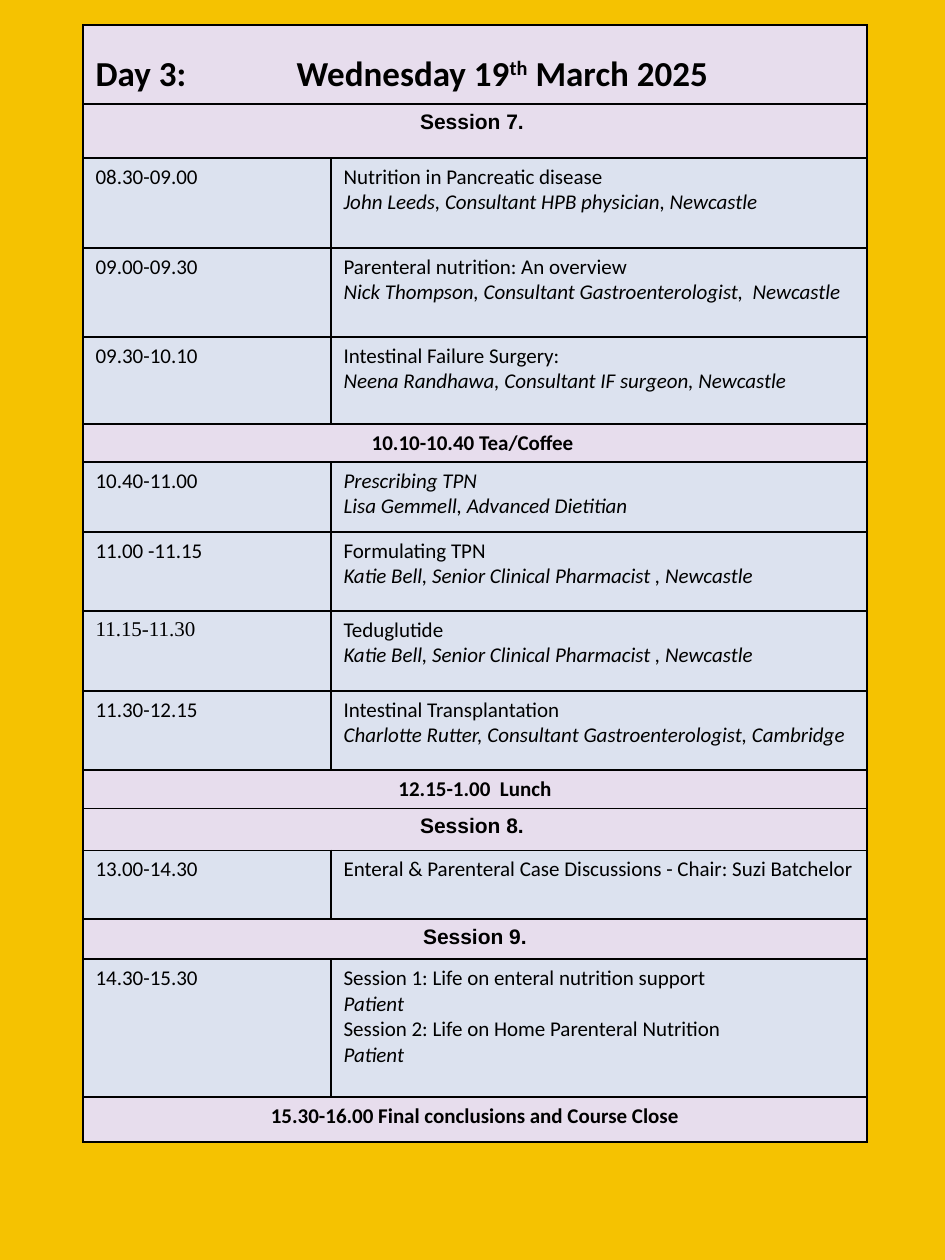
from pptx import Presentation
from pptx.dml.color import RGBColor
from pptx.enum.text import PP_ALIGN
from pptx.oxml.ns import qn
from pptx.util import Emu, Pt
from lxml.etree import SubElement

PX_PER_INCH = 126
GOLD, LILAC, BLUE, BLACK = "F5C201", "E7DDED", "DCE2EF", "000000"
LEFT, TOP = 83, 25
COLUMNS = (248, 536)
TITLE_HEIGHT = 79

# Banner rows: height, text, font
# Talk rows: height, time, time font, lines as (text, italic)
ROWS = [
    (54, "Session 7. ", "Arial"),
    (90, "08.30-09.00", "Calibri", [
        ("Nutrition in Pancreatic disease", False),
        ("John Leeds, Consultant HPB physician, Newcastle", True)]),
    (89, "09.00-09.30", "Calibri", [
        ("Parenteral nutrition: An overview", False),
        ("Nick Thompson, Consultant Gastroenterologist,  Newcastle", True)]),
    (87, "09.30-10.10", "Calibri", [
        ("Intestinal Failure Surgery:", False),
        ("Neena Randhawa, Consultant IF surgeon, Newcastle", True)]),
    (38, "10.10-10.40 Tea/Coffee ", "Calibri"),
    (70, "10.40-11.00", "Calibri", [
        ("Prescribing TPN", True),
        ("Lisa Gemmell, Advanced Dietitian", True)]),
    (79, "11.00 -11.15", "Calibri", [
        ("Formulating TPN", False),
        ("Katie Bell, Senior Clinical Pharmacist , Newcastle", True)]),
    (80, "11.15-11.30", "Times New Roman", [
        ("Teduglutide", False),
        ("Katie Bell, Senior Clinical Pharmacist , Newcastle", True)]),
    (79, "11.30-12.15", "Calibri", [
        ("Intestinal Transplantation", False),
        ("Charlotte Rutter, Consultant Gastroenterologist, Cambridge", True)]),
    (38, "12.15-1.00  Lunch", "Calibri"),
    (42, "Session 8. ", "Arial"),
    (69, "13.00-14.30", "Calibri", [
        ("Enteral & Parenteral Case Discussions - Chair: Suzi Batchelor", False)]),
    (40, "Session 9.", "Arial"),
    (138, "14.30-15.30", "Calibri", [
        ("Session 1: Life on enteral nutrition support", False),
        ("Patient", True),
        ("Session 2: Life on Home Parenteral Nutrition", False),
        ("Patient", True)]),
    (45, "15.30-16.00 Final conclusions and Course Close", "Calibri"),
]


def px(n):
    return Emu(round(n * 914400 / PX_PER_INCH))


def color(value):
    return RGBColor.from_string(value)


def add_text(p, text, font="Calibri", size=12, bold=False, italic=False, raised=0):
    r = p.add_run()
    r.text = text
    f = r.font
    f.name, f.size, f.bold, f.italic = font, Pt(size), bold, italic
    f.color.rgb = color(BLACK)
    if raised:
        f._element.set("baseline", str(raised * 1000))


def format_cell(cell, fill):
    """Give the cell a thin black border on each side and a plain fill."""
    tcPr = cell._tc.get_or_add_tcPr()
    for side in ("a:lnL", "a:lnR", "a:lnT", "a:lnB"):
        ln = SubElement(tcPr, qn(side), w=str(Pt(1)))
        SubElement(SubElement(ln, qn("a:solidFill")), qn("a:srgbClr"), val=BLACK)
    cell.fill.solid()
    cell.fill.fore_color.rgb = color(fill)


def add_banner(row):
    """Merge the row into one lilac cell and return its paragraph."""
    first, last = row.cells
    for cell in (first, last):
        format_cell(cell, LILAC)
    first.merge(last)
    return first.text_frame.paragraphs[0]


def add_title(row):
    p = add_banner(row)
    row.cells[0].margin_top = px(28)
    tabs = SubElement(p._p.get_or_add_pPr(), qn("a:tabLst"))
    SubElement(tabs, qn("a:tab"), pos=str(px(201)), algn="l")
    add_text(p, "Day 3:\tWednesday 19", size=20, bold=True)
    add_text(p, "th", size=20, bold=True, raised=30)
    add_text(p, " March 2025", size=20, bold=True)


def add_break(row, text, font):
    p = add_banner(row)
    p.alignment = PP_ALIGN.CENTER
    add_text(p, text, font=font, bold=True)


def add_talk(row, time, time_font, lines):
    time_cell, talk_cell = row.cells
    for cell in (time_cell, talk_cell):
        format_cell(cell, BLUE)
    add_text(time_cell.text_frame.paragraphs[0], time, font=time_font)
    tf = talk_cell.text_frame
    for i, (text, italic) in enumerate(lines):
        p = tf.add_paragraph() if i else tf.paragraphs[0]
        add_text(p, text, italic=italic)


def add_programme(slide):
    heights = [TITLE_HEIGHT] + [entry[0] for entry in ROWS]
    table = slide.shapes.add_table(
        len(heights), len(COLUMNS), px(LEFT), px(TOP),
        px(sum(COLUMNS)), px(sum(heights))).table
    table.first_row = table.horz_banding = False
    for column, width in zip(table.columns, COLUMNS):
        column.width = px(width)
    rows = list(table.rows)
    for row, height in zip(rows, heights):
        row.height = px(height)

    add_title(rows[0])
    for row, (_, *content) in zip(rows[1:], ROWS):
        add_row = add_talk if len(content) == 3 else add_break
        add_row(row, *content)


def main():
    prs = Presentation()
    prs.slide_width, prs.slide_height = px(945), px(1260)
    slide = prs.slides.add_slide(prs.slide_layouts[6])

    # Background
    fill = slide.background.fill
    fill.solid()
    fill.fore_color.rgb = color(GOLD)

    # Day programme
    add_programme(slide)
    prs.save("out.pptx")


if __name__ == "__main__":
    main()
